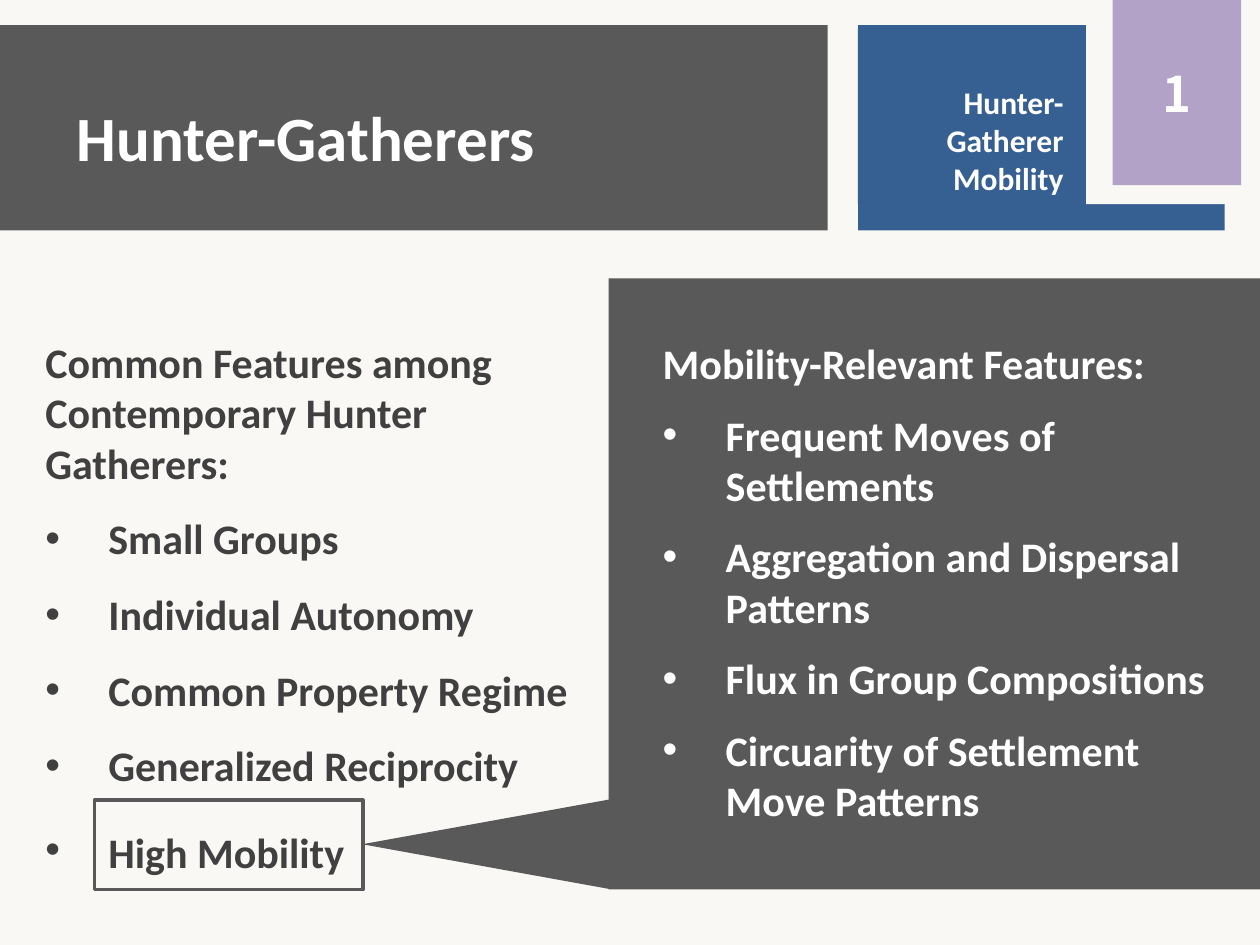
from lxml.etree import SubElement
from pptx import Presentation
from pptx.dml.color import RGBColor
from pptx.enum.shapes import MSO_SHAPE
from pptx.enum.text import MSO_ANCHOR, MSO_AUTO_SIZE, PP_ALIGN
from pptx.oxml.ns import qn
from pptx.util import Inches, Pt

# The slide is a grid of 100 columns by 75 rows
COLUMNS, ROWS = 100, 75
SLIDE_WIDTH, SLIDE_HEIGHT = Inches(10), Inches(7.5)

PAPER, DARK, BLUE = "F9F8F5", "595959", "376092"
LILAC, WHITE, INK = "B3A2C7", "FFFFFF", "404040"
INDENT = Inches(0.5)

COMMON_FEATURES = ["Small Groups", "Individual Autonomy", "Common Property Regime",
                   "Generalized Reciprocity", "High Mobility"]
MOBILITY_FEATURES = ["Frequent Moves of Settlements",
                     "Aggregation and Dispersal Patterns",
                     "Flux in Group Compositions",
                     "Circuarity of Settlement Move Patterns"]


def color(hex_value):
    return RGBColor.from_string(hex_value)


def cells(column, row, columns, rows):
    """Turn a grid area into left, top, width and height."""
    return (int(SLIDE_WIDTH * column / COLUMNS), int(SLIDE_HEIGHT * row / ROWS),
            int(SLIDE_WIDTH * columns / COLUMNS), int(SLIDE_HEIGHT * rows / ROWS))


def add_block(slide, area, fill=None, outline=None, kind=MSO_SHAPE.RECTANGLE):
    block = slide.shapes.add_shape(kind, *cells(*area))
    block.shadow.inherit = False
    if fill:
        block.fill.solid()
        block.fill.fore_color.rgb = color(fill)
    else:
        block.fill.background()
    if outline:
        block.line.color.rgb = color(outline)
        block.line.width = Pt(2)
    else:
        block.line.fill.background()
    return block


def add_run(paragraph, text, size, ink, font="Calibri"):
    run = paragraph.add_run()
    run.text = text
    run.font.name = font
    run.font.size = Pt(size)
    run.font.bold = True
    run.font.color.rgb = color(ink)


def place(slide, placeholder, area, anchor):
    """Move a placeholder into its area and in front of the blocks."""
    placeholder.left, placeholder.top, placeholder.width, placeholder.height = cells(*area)
    slide.shapes.element.append(placeholder.element)
    frame = placeholder.text_frame
    frame.word_wrap = True
    frame.auto_size = MSO_AUTO_SIZE.NONE
    frame.vertical_anchor = anchor
    return frame


def set_bullet(paragraph, bulleted):
    properties = paragraph._p.get_or_add_pPr()
    properties.set("marL", str(INDENT if bulleted else 0))
    properties.set("indent", str(-INDENT if bulleted else 0))
    if bulleted:
        SubElement(properties, qn("a:buFont"), typeface="Arial")
        SubElement(properties, qn("a:buChar"), char="•")
    else:
        SubElement(properties, qn("a:buNone"))


def fill_list(frame, heading, items, ink, item_spacing, gap):
    for index, text in enumerate([heading] + items):
        paragraph = frame.paragraphs[0] if index == 0 else frame.add_paragraph()
        paragraph.space_before = Pt(0)
        paragraph.space_after = Pt(gap)
        paragraph.line_spacing = item_spacing if index else 1.0
        set_bullet(paragraph, index > 0)
        add_run(paragraph, text, 24, ink)


def add_header(slide, title):
    add_block(slide, (0, 2, 65.7, 16.3), DARK)
    title_frame = place(slide, title, (5.1, 2.8, 85, 16.1), MSO_ANCHOR.MIDDLE)
    title_frame.paragraphs[0].alignment = PP_ALIGN.LEFT
    add_run(title_frame.paragraphs[0], "Hunter-Gatherers", 36, WHITE)

    # Topic block with its corner cut out for the number tab
    add_block(slide, (68.1, 2, 29.1, 16.3), BLUE)
    add_block(slide, (86.2, 0, 13.8, 16.2), PAPER)
    number_tab = add_block(slide, (88.3, 0, 10.2, 14.7), LILAC)
    number = number_tab.text_frame.paragraphs[0]
    number.alignment = PP_ALIGN.CENTER
    add_run(number, "1", 28, WHITE, "Noto Sans CJK SC")

    topic_frame = add_block(slide, (68.1, 2.2, 17.3, 14), BLUE).text_frame
    topic_frame.word_wrap = True
    topic_frame.vertical_anchor = MSO_ANCHOR.TOP
    topic_frame.margin_top = Inches(0.44)
    topic_frame.paragraphs[0].alignment = PP_ALIGN.RIGHT
    add_run(topic_frame.paragraphs[0], "Hunter-Gatherer Mobility", 18, WHITE)


def add_features(slide, common, mobility):
    common_frame = place(slide, common, (2.6, 26.2, 45.7, 44.4), MSO_ANCHOR.TOP)
    fill_list(common_frame, "Common Features among Contemporary Hunter Gatherers:",
              COMMON_FEATURES, INK, 1.5, 0)
    # The larger closing space gives the highlighted line more height
    add_run(common_frame.paragraphs[-1], " ", 28, INK)

    add_block(slide, (48.3, 22.1, 51.7, 48.5), DARK)
    mobility_frame = place(slide, mobility, (51.6, 26.3, 45.7, 40.1), MSO_ANCHOR.TOP)
    fill_list(mobility_frame, "Mobility-Relevant Features:",
              MOBILITY_FEATURES, WHITE, 1.0, 12)

    # Pointer from the dark panel to the framed feature
    pointer = add_block(slide, (35, 57.2, 7.1, 19.6), DARK,
                        kind=MSO_SHAPE.ISOSCELES_TRIANGLE)
    pointer.rotation = 270
    add_block(slide, (7.5, 63.5, 21.3, 7.1), outline=DARK)


def main():
    presentation = Presentation()
    presentation.slide_width, presentation.slide_height = SLIDE_WIDTH, SLIDE_HEIGHT
    slide = presentation.slides.add_slide(presentation.slide_layouts[3])
    slide.background.fill.solid()
    slide.background.fill.fore_color.rgb = color(PAPER)
    title, common, mobility = list(slide.placeholders)
    add_header(slide, title)
    add_features(slide, common, mobility)
    presentation.save("out.pptx")


if __name__ == "__main__":
    main()
